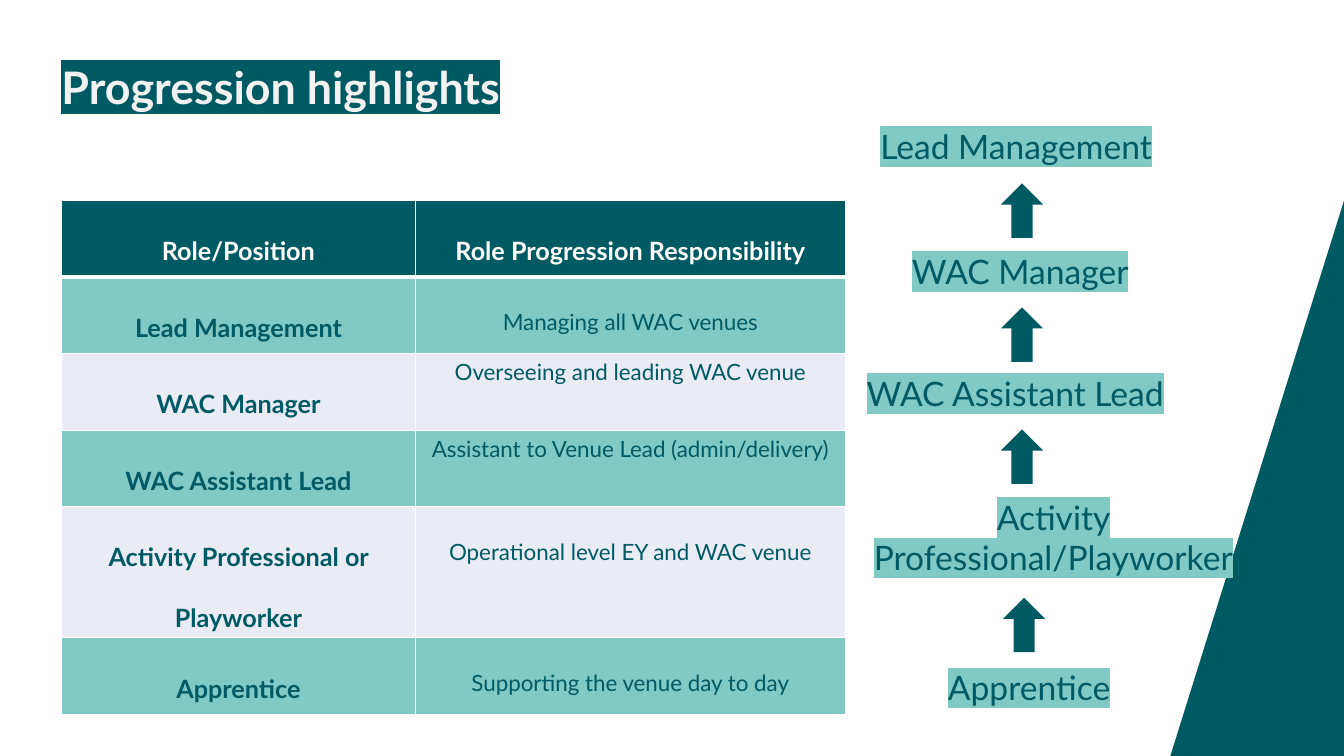
from lxml import etree
from pptx import Presentation
from pptx.dml.color import RGBColor
from pptx.enum.shapes import MSO_SHAPE
from pptx.enum.text import MSO_ANCHOR, MSO_AUTO_SIZE, PP_ALIGN
from pptx.oxml import parse_xml
from pptx.oxml.ns import qn
from pptx.util import Pt

LEFT, CENTER = PP_ALIGN.LEFT, PP_ALIGN.CENTER
BOTTOM, NO_FIT = MSO_ANCHOR.BOTTOM, MSO_AUTO_SIZE.NONE
UP_ARROW = MSO_SHAPE.UP_ARROW
TEAL, MINT, PALE, WHITE, OFF_WHITE = "005A63", "80C9C4", "E9EBF5", "FFFFFF", "F2F2F2"
A_NS = "http://schemas.openxmlformats.org/drawingml/2006/main"

TITLE = "Progression highlights"
TITLE_BOX = (36.7, 39.6, 720, 45.4)
WEDGE = [(960, 540), (836, 540), (960, 143.5)]

HEADER = ("Role/Position", "Role Progression Responsibility")
# role, responsibility, line spacing of the responsibility
ROLES = [
    ("Lead Management", "Managing all WAC venues", 2),
    ("WAC Manager", "Overseeing and leading WAC venue", 1),
    ("WAC Assistant Lead", "Assistant to Venue Lead (admin/delivery)", 1),
    ("Activity Professional or Playworker", "Operational level EY and WAC venue", 2),
    ("Apprentice", "Supporting the venue day to day", 2),
]
TABLE_LEFT, TABLE_TOP = 44, 143.3
COL_WIDTHS, ROW_HEIGHT = (252.7, 307.3), 54.7

# text, left, top, width, height, alignment
LADDER = [
    ("Lead Management", 586.1, 86.4, 279.4, 36, CENTER),
    ("WAC Manager", 589, 175.7, 279.4, 36, CENTER),
    ("WAC Assistant Lead", 612, 262.8, 279.4, 36, LEFT),
    ("Activity Professional/Playworker", 595.4, 351.4, 313.9, 65.5, CENTER),
    ("Apprentice", 573.8, 473, 322.6, 36, CENTER),
]
ARROW_SIZE = (30.2, 38.9)
ARROW_CENTERS = [(730, 150.5), (730, 239), (730, 326.2), (731.5, 446.4)]


def rgb(color):
    return RGBColor.from_string(color)


def pts(values):
    return [Pt(v) for v in values]


def write(tf, text, size, color, bold=False, align=CENTER, spacing=1, highlight=None):
    p = tf.paragraphs[0]
    p.alignment, p.line_spacing = align, float(spacing)
    r = p.add_run()
    r.text = text
    for name, value in {"name": "Lato", "size": Pt(size), "bold": bold}.items():
        setattr(r.font, name, value)
    r.font.color.rgb = rgb(color)
    if highlight:
        mark = etree.Element(qn("a:highlight"))
        etree.SubElement(mark, qn("a:srgbClr"), val=highlight)
        r.font.fill._xPr.find(qn("a:solidFill")).addnext(mark)


def paint(shape, color):
    shape.shadow.inherit = False
    shape.fill.solid()
    shape.fill.fore_color.rgb = rgb(color)
    shape.line.fill.background()


def style_cell(cell, color, top, bottom):
    """Fill a cell and give it white borders; top and bottom are widths."""
    cell.fill.solid()
    cell.fill.fore_color.rgb = rgb(color)
    tcPr = cell._tc.get_or_add_tcPr()
    for i, (side, width) in enumerate([("L", 1), ("R", 1), ("T", top), ("B", bottom)]):
        tcPr.insert(i, parse_xml(
            f'<a:ln{side} xmlns:a="{A_NS}" w="{Pt(width)}"><a:solidFill>'
            f'<a:srgbClr val="{WHITE}"/></a:solidFill></a:ln{side}>'))


def add_title(s):
    title = s.shapes.title
    title.left, title.top, title.width, title.height = pts(TITLE_BOX)
    tf = title.text_frame
    for name, value in {"word_wrap": True, "auto_size": NO_FIT,
                        "vertical_anchor": BOTTOM}.items():
        setattr(tf, name, value)
    write(tf, TITLE, 32, OFF_WHITE, True, LEFT, 0.9, TEAL)


def add_wedge(s):
    corners = [pts(corner) for corner in WEDGE]
    builder = s.shapes.build_freeform(*corners[0])
    builder.add_line_segments(corners[1:], close=True)
    paint(builder.convert_to_shape(), TEAL)


def add_roles(s):
    n = len(ROLES) + 1
    table = s.shapes.add_table(n, 2, *pts((
        TABLE_LEFT, TABLE_TOP, sum(COL_WIDTHS), n * ROW_HEIGHT))).table
    for col, width in zip(table.columns, COL_WIDTHS):
        col.width = Pt(width)
    for row in table.rows:
        row.height = Pt(ROW_HEIGHT)
    for c, text in enumerate(HEADER):
        cell = table.cell(0, c)
        style_cell(cell, TEAL, 1, 3)
        write(cell.text_frame, text, 18, WHITE, True, spacing=2)
    for i, (role, duty, spacing) in enumerate(ROLES, 1):
        for c in range(2):
            style_cell(table.cell(i, c), MINT if i % 2 else PALE, 3 if i == 1 else 1, 1)
        write(table.cell(i, 0).text_frame, role, 18, TEAL, True, spacing=2)
        write(table.cell(i, 1).text_frame, duty, 16, TEAL, spacing=spacing)


def add_ladder(s):
    for text, *box, align in LADDER:
        tf = s.shapes.add_textbox(*pts(box)).text_frame
        tf.word_wrap = True
        write(tf, text, 24, TEAL, align=align, highlight=MINT)
    w, h = ARROW_SIZE
    for x, y in ARROW_CENTERS:
        paint(s.shapes.add_shape(UP_ARROW, *pts((x - w / 2, y - h / 2, w, h))), TEAL)


def main():
    prs = Presentation()
    prs.slide_width, prs.slide_height = pts((960, 540))
    s = prs.slides.add_slide(prs.slide_layouts[5])
    add_title(s)
    add_wedge(s)
    add_roles(s)
    add_ladder(s)
    prs.save("out.pptx")


if __name__ == "__main__":
    main()
